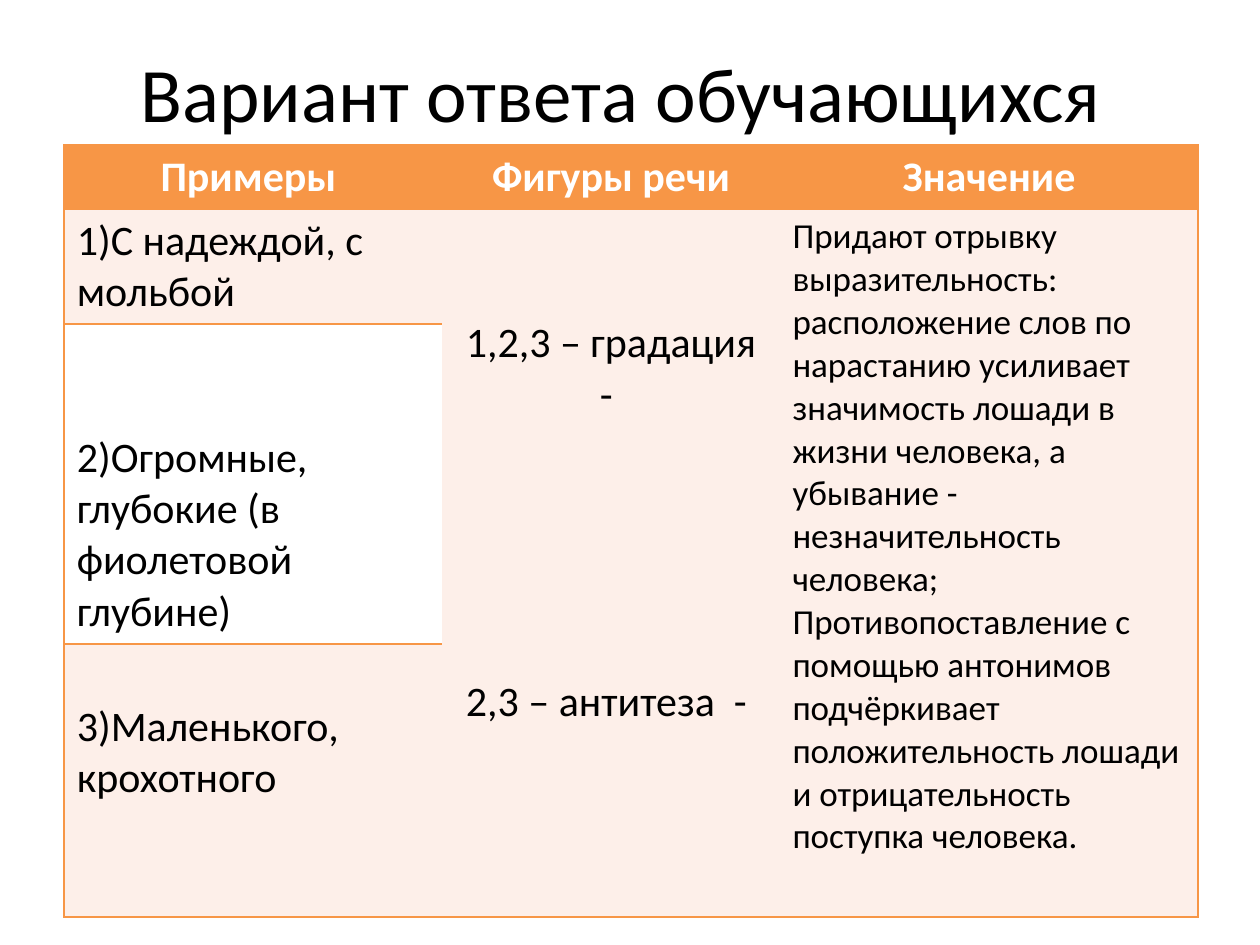
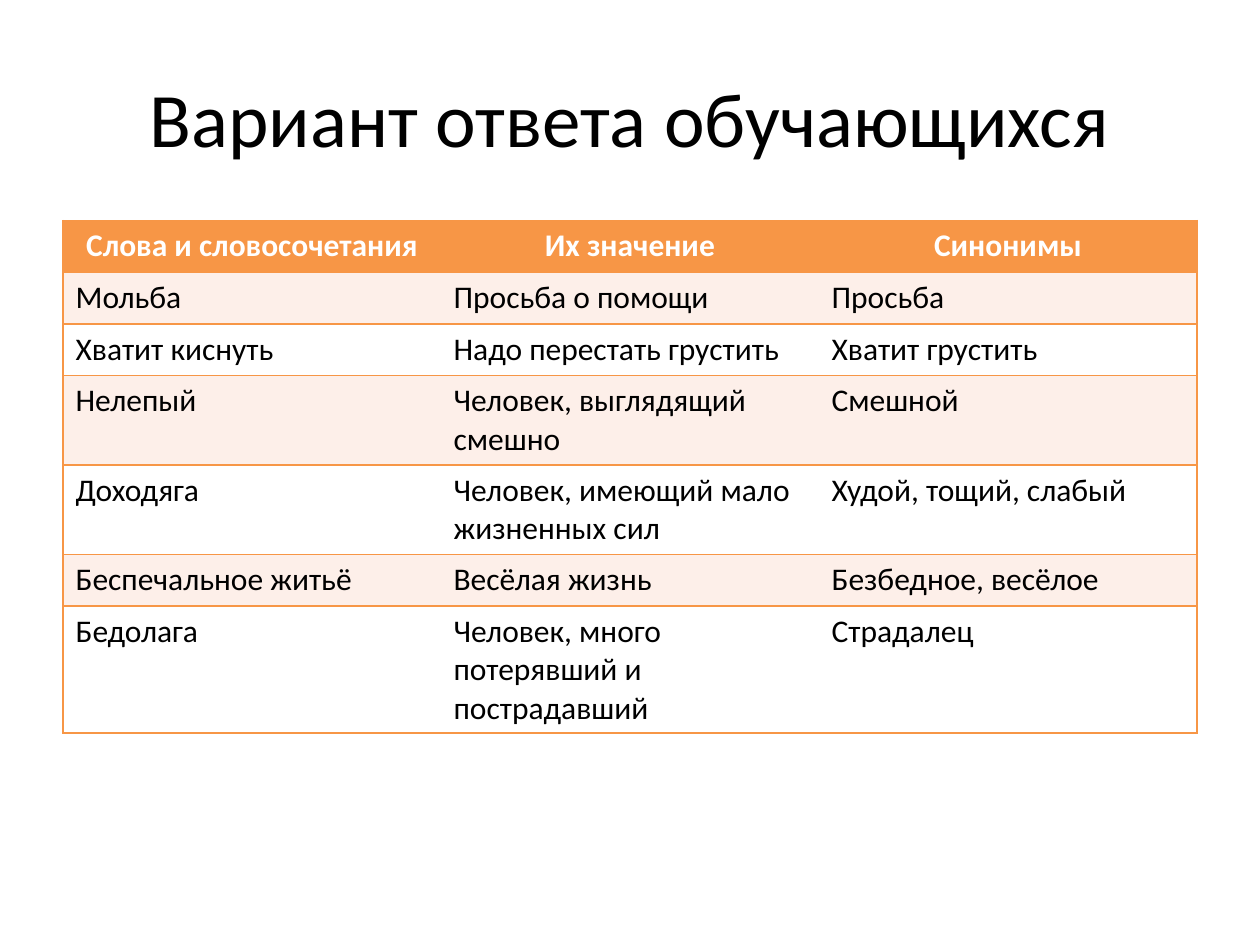
import pptx
import pptx.dml.color
import pptx.enum.text
import pptx.oxml
import pptx.oxml.ns
import pptx.util

Inches = pptx.util.Inches
Pt = pptx.util.Pt
RGBColor = pptx.dml.color.RGBColor
ALIGN = pptx.enum.text.PP_ALIGN
ANCHOR = pptx.enum.text.MSO_ANCHOR

FONT = "Calibri"
ORANGE = RGBColor(0xF7, 0x96, 0x46)
TINT = RGBColor(0xFD, 0xEF, 0xE9)
WHITE = RGBColor(0xFF, 0xFF, 0xFF)
BLACK = RGBColor(0, 0, 0)

LINE_SPACING = 1.22  # line height relative to the font size
CELL_MARGIN = 0.05

# A cell is a string, or a dict with its paragraphs and format.
# "lead" is the free lines above the text, "gap" those between paragraphs.
SLIDES = [
    {
        "title": "Вариант ответа обучающихся ",
        "title_height": 0.85,
        "table_at": (0.51, 1.15),
        "columns": [3, 2.68, 3.32],
        "row_heights": [0.51, 0.91, 2.54, 2.17],
        "size": 24,
        "rows": [
            ["Примеры ", "Фигуры речи", "Значение"],
            [
                "1)С надеждой, с мольбой",
                {
                    "paragraphs": ["1,2,3 – градация - ", "2,3 – антитеза  - "],
                    "lead": 2, "gap": 5, "align": ALIGN.CENTER, "rows": 3,
                },
                {
                    "paragraphs": [
                        "Придают отрывку выразительность:",
                        "расположение слов по нарастанию усиливает значимость лошади "
                        "в жизни человека, а убывание - незначительность человека;",
                        "Противопоставление с помощью антонимов подчёркивает "
                        "положительность лошади и отрицательность поступка человека.",
                    ],
                    "size": 20, "rows": 3,
                },
            ],
            [{"paragraphs": ["2)Огромные, глубокие (в фиолетовой глубине)"], "lead": 2}],
            [{"paragraphs": ["3)Маленького, крохотного"], "lead": 1}],
        ],
    },
    {
        "title": "Вариант ответа обучающихся",
        "title_height": 1.25,
        "table_at": (0.5, 1.75),
        "columns": [3, 3, 3],
        "row_heights": [0.41, 0.41, 0.41, 0.71, 0.71, 0.41, 1.01],
        "size": 18,
        "rows": [
            ["Слова и словосочетания", "Их значение", "Синонимы"],
            ["Мольба", "Просьба о помощи", "Просьба"],
            ["Хватит киснуть", "Надо перестать грустить", "Хватит грустить"],
            ["Нелепый", "Человек, выглядящий смешно", "Смешной"],
            ["Доходяга", "Человек, имеющий мало жизненных сил", "Худой, тощий, слабый"],
            ["Беспечальное житьё", "Весёлая жизнь", "Безбедное, весёлое"],
            ["Бедолага", "Человек, много потерявший и пострадавший", "Страдалец"],
        ],
    },
]


def write_text(text_frame, paragraphs, size, color=BLACK, bold=False,
               align=ALIGN.LEFT, gap=0):
    for index, text in enumerate(paragraphs):
        paragraph = text_frame.paragraphs[0] if index == 0 else text_frame.add_paragraph()
        paragraph.alignment = align
        if index and gap:
            paragraph.space_before = Pt(gap * size * LINE_SPACING)
        run = paragraph.add_run()
        run.text = text
        run.font.name = FONT
        run.font.size = Pt(size)
        run.font.bold = bold
        run.font.color.rgb = color


def add_title(slide, text, height):
    box = slide.shapes.add_textbox(Inches(0.5), Inches(0.3), Inches(9), Inches(height))
    box.text_frame.word_wrap = True
    box.text_frame.vertical_anchor = ANCHOR.MIDDLE
    write_text(box.text_frame, [text], size=44, align=ALIGN.CENTER)


def set_borders(cell, visible):
    """Draw the edges named in visible (letters of LRTB) and clear the others."""
    properties = cell._tc.get_or_add_tcPr()
    namespace = pptx.oxml.ns.nsdecls("a")
    for edge in "LRTB":
        if edge in visible:
            paint = f'<a:solidFill><a:srgbClr val="{ORANGE}"/></a:solidFill>'
        else:
            paint = "<a:noFill/>"
        properties.append(pptx.oxml.parse_xml(
            f'<a:ln{edge} {namespace} w="{Pt(1)}">{paint}</a:ln{edge}>'))


def fill_cell(cell, content, size, is_header):
    if isinstance(content, str):
        content = {"paragraphs": [content]}
    size = content.get("size", size)
    lead = content.get("lead", 0) * size * LINE_SPACING / 72
    cell.margin_top = Inches(CELL_MARGIN + lead)
    write_text(
        cell.text_frame, content["paragraphs"], size,
        color=WHITE if is_header else BLACK, bold=is_header,
        align=ALIGN.CENTER if is_header else content.get("align", ALIGN.LEFT),
        gap=content.get("gap", 0))


def add_banded_table(slide, data):
    heights, widths, rows = data["row_heights"], data["columns"], data["rows"]
    left, top = data["table_at"]
    table = slide.shapes.add_table(
        len(heights), len(widths), Inches(left), Inches(top),
        Inches(sum(widths)), Inches(sum(heights))).table
    table.horz_banding = False
    for column, width in zip(table.columns, widths):
        column.width = Inches(width)
    for row, height in zip(table.rows, heights):
        row.height = Inches(height)

    for row_index, contents in enumerate(rows):
        for column_index, content in enumerate(contents):
            cell = table.cell(row_index, column_index)
            if isinstance(content, dict) and "rows" in content:
                cell.merge(table.cell(row_index + content["rows"] - 1, column_index))
            fill_cell(cell, content, data["size"], is_header=row_index == 0)

    last_row, last_column = len(heights) - 1, len(widths) - 1
    for row_index in range(len(heights)):
        band = ORANGE if row_index == 0 else TINT if row_index % 2 else WHITE
        for column_index in range(len(widths)):
            cell = table.cell(row_index, column_index)
            visible = "" if cell.is_spanned else "TB"
            visible += "B" if row_index == last_row else ""
            visible += "L" if column_index == 0 else ""
            visible += "R" if column_index == last_column else ""
            set_borders(cell, visible)
            cell.fill.solid()
            cell.fill.fore_color.rgb = TINT if cell.is_spanned else band


def main():
    presentation = pptx.Presentation()
    presentation.slide_width = Inches(10)
    presentation.slide_height = Inches(7.5)
    for data in SLIDES:
        slide = presentation.slides.add_slide(presentation.slide_layouts[6])
        add_title(slide, data["title"], data["title_height"])
        add_banded_table(slide, data)
    presentation.save("out.pptx")


if __name__ == "__main__":
    main()
